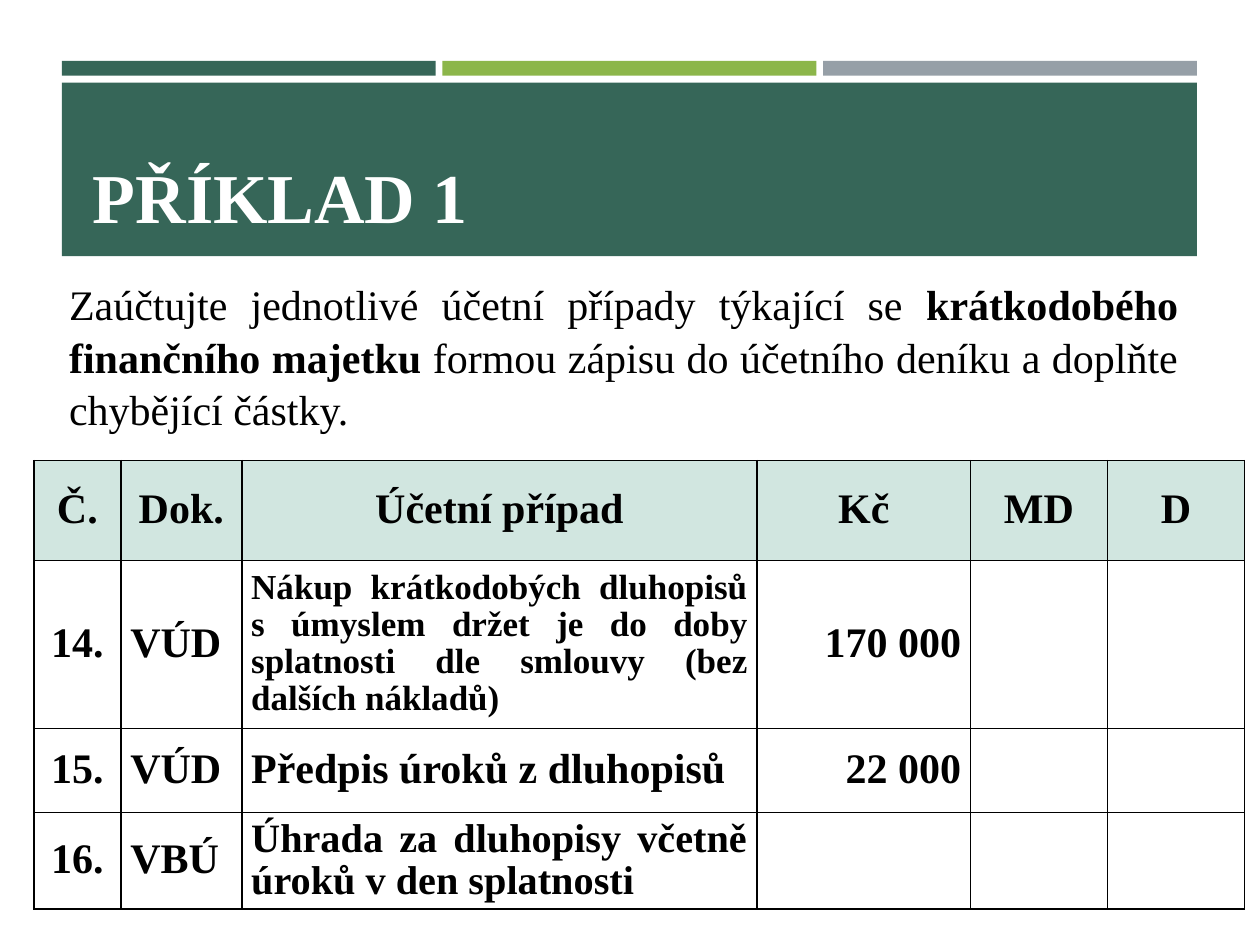
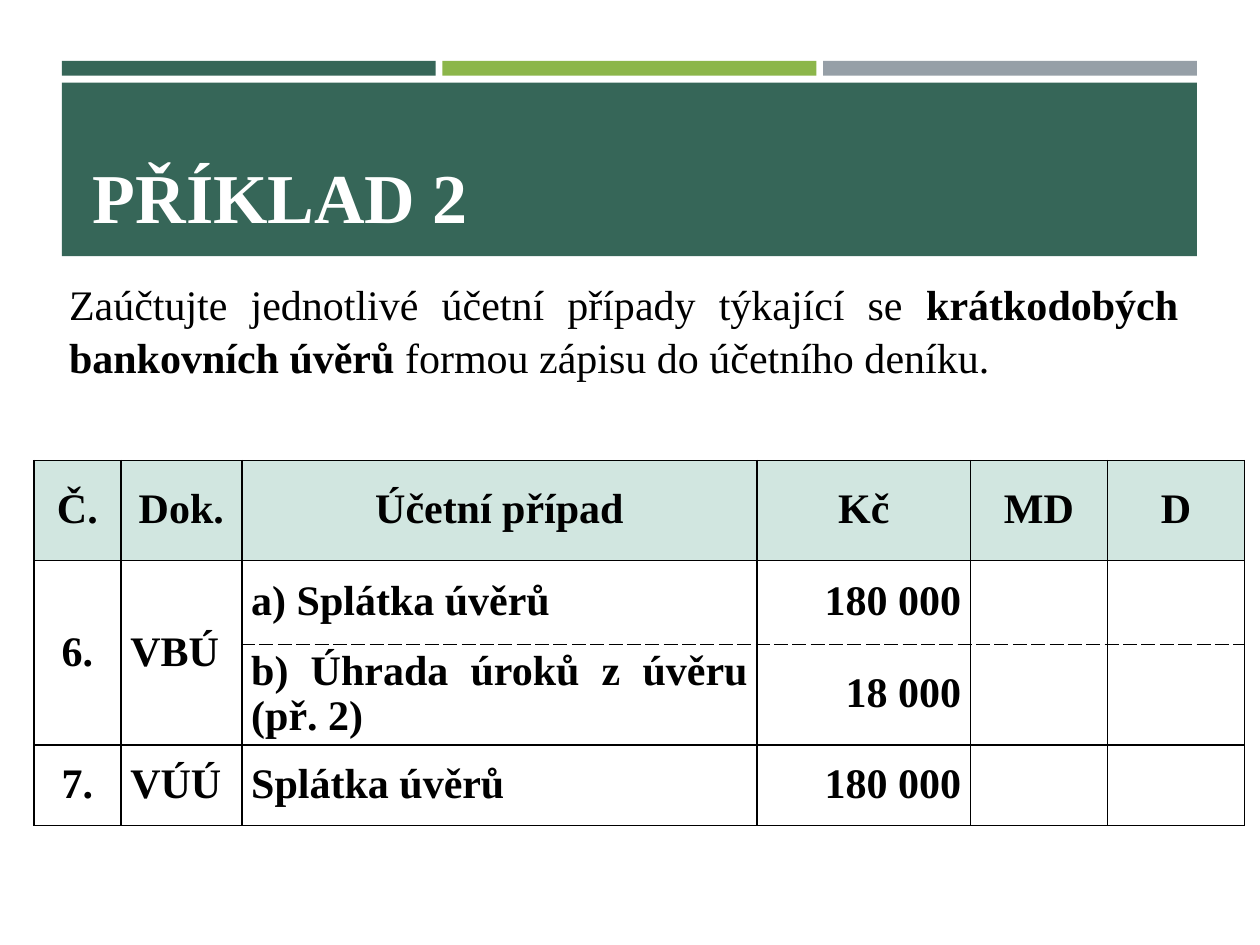
from lxml import etree
from pptx import Presentation
from pptx.dml.color import RGBColor
from pptx.enum.shapes import MSO_SHAPE
from pptx.enum.text import MSO_ANCHOR, PP_ALIGN
from pptx.oxml import parse_xml
from pptx.oxml.ns import nsdecls
from pptx.util import Pt

RECTANGLE = MSO_SHAPE.RECTANGLE
TOP, MIDDLE, BOTTOM = MSO_ANCHOR.TOP, MSO_ANCHOR.MIDDLE, MSO_ANCHOR.BOTTOM
LEFT, CENTER, RIGHT, JUSTIFY = PP_ALIGN.LEFT, PP_ALIGN.CENTER, PP_ALIGN.RIGHT, PP_ALIGN.JUSTIFY

FONT = "Times New Roman"
GREEN, LIME, GREY, MINT = "366658", "8CB64A", "969FA7", "D1E6E0"
BLACK, WHITE = "000000", "FFFFFF"
MARGIN, BAND_WIDTH = 35.3, 648.7
BAR_WIDTH, BAR_STEP = 213.7, 217.5
HEADINGS = ("Č.", "Dok.", "Účetní případ", "Kč", "MD", "D")
COLUMN_WIDTHS = (49.7, 69.1, 294.5, 121.9, 78.3, 78.3)
ALIGNMENTS = (CENTER, LEFT, JUSTIFY, RIGHT, CENTER, CENTER)
CASE_COLUMN = 2
HEADING_HEIGHT = 57


def color(hex_value):
    """Return the colour for a hex string."""
    return RGBColor.from_string(hex_value)


class JournalDeck:
    """Hold the presentation style and the slide being built."""

    def __init__(self):
        """Start an empty presentation."""
        self.deck = Presentation()
        self.deck.slide_width, self.deck.slide_height = Pt(720), Pt(540)
        self.slide = None

    def start_slide(self, title):
        """Add a slide with the colour bars and the title band."""
        self.slide = self.deck.slides.add_slide(self.deck.slide_layouts[6])
        for index, bar_color in enumerate((GREEN, LIME, GREY)):
            self.block(MARGIN + index * BAR_STEP, 34.8, BAR_WIDTH, 8.4, bar_color)
        self.block(MARGIN, 47.3, BAND_WIDTH, 99.1, GREEN)
        self.text(46, 54, 629.3, 85, [(title, True)], 40, WHITE, BOTTOM, LEFT)

    def block(self, left, top, width, height, fill):
        """Add a plain filled rectangle."""
        block = self.slide.shapes.add_shape(RECTANGLE, Pt(left), Pt(top), Pt(width), Pt(height))
        block.shadow.inherit = False
        block.fill.solid()
        block.fill.fore_color.rgb = color(fill)
        block.line.fill.background()

    def add_runs(self, paragraph, pieces, size, ink, align, spacing):
        """Fill a paragraph with (words, bold) runs."""
        paragraph.alignment = align
        paragraph.line_spacing = spacing
        for words, bold in pieces:
            run = paragraph.add_run()
            run.text = words
            run.font.name, run.font.size, run.font.bold = FONT, Pt(size), bold
            run.font.color.rgb = color(ink)

    def text(self, left, top, width, height, pieces, size, ink, anchor, align, spacing=1.0):
        """Add a wrapped text box with one paragraph."""
        box = self.slide.shapes.add_textbox(Pt(left), Pt(top), Pt(width), Pt(height))
        frame = box.text_frame
        frame.word_wrap = True
        frame.vertical_anchor = anchor
        self.add_runs(frame.paragraphs[0], pieces, size, ink, align, spacing)

    def instruction(self, subject, ending, height):
        """Add the exercise instruction with its subject in bold."""
        opening = "Zaúčtujte jednotlivé účetní případy týkající se "
        pieces = [(opening, False), (subject, True), (ending, False)]
        self.text(32.4, 154, 648, height, pieces, 24, BLACK, TOP, JUSTIFY, 1.05)

    def borders(self, cell, dashed_sides):
        """Draw the four cell borders, dashing the given sides."""
        properties = cell._tc.get_or_add_tcPr()
        for index, side in enumerate("LRTB"):
            line = parse_xml(
                f'<a:ln{side} {nsdecls("a")} w="{Pt(1)}"><a:solidFill>'
                f'<a:srgbClr val="{BLACK}"/></a:solidFill></a:ln{side}>')
            dash = etree.SubElement(line, line[0].tag.replace("solidFill", "prstDash"))
            dash.set("val", "dash" if side in dashed_sides else "solid")
            properties.insert(index, line)

    def cell(self, cell, words, size, align, fill=None, dashed_sides=""):
        """Format one table cell and add its words."""
        cell.margin_left = cell.margin_right = Pt(5.4)
        cell.margin_top = cell.margin_bottom = Pt(0)
        cell.vertical_anchor = MIDDLE
        if fill:
            cell.fill.solid()
            cell.fill.fore_color.rgb = color(fill)
        else:
            cell.fill.background()
        self.borders(cell, dashed_sides)
        if words:
            self.add_runs(cell.text_frame.paragraphs[0], [(words, True)], size, BLACK, align, 0.95)

    def journal(self, entries, split_row=None):
        """Add the journal of (height, case size, words); split_row shares its number with the next."""
        heights = [HEADING_HEIGHT] + [height for height, _, _ in entries]
        frame = self.slide.shapes.add_table(
            len(heights), len(HEADINGS), Pt(19.4), Pt(263.2), Pt(sum(COLUMN_WIDTHS)), Pt(sum(heights)))
        table = frame.table
        for column, width in zip(table.columns, COLUMN_WIDTHS):
            column.width = Pt(width)
        for row, height in zip(table.rows, heights):
            row.height = Pt(height)
        for column, heading in enumerate(HEADINGS):
            self.cell(table.cell(0, column), heading, 24, CENTER, MINT)
        for row, (_, case_size, words) in enumerate(entries, 1):
            for column, align in enumerate(ALIGNMENTS):
                is_case = column == CASE_COLUMN
                dashed = ""
                if split_row and column >= CASE_COLUMN:
                    dashed = {split_row: "B", split_row + 1: "T"}.get(row, "")
                entry = words[column] if column < len(words) else ""
                self.cell(table.cell(row, column), entry, case_size if is_case else 24, align,
                          dashed_sides=dashed)
        if split_row:
            for column in range(CASE_COLUMN):
                table.cell(split_row, column).merge(table.cell(split_row + 1, column))


def main():
    """Build both exercises and save them."""
    journal_deck = JournalDeck()

    journal_deck.start_slide("PŘÍKLAD 1")
    journal_deck.instruction("krátkodobého finančního majetku ",
                             "formou zápisu do účetního deníku a doplňte chybějící částky.", 94.5)
    bond_purchase = ("Nákup krátkodobých dluhopisů s úmyslem držet je do doby splatnosti "
                     "dle smlouvy (bez dalších nákladů)")
    journal_deck.journal([
        (96, 20, ("14.", "VÚD", bond_purchase, "170 000")),
        (48, 24, ("15.", "VÚD", "Předpis úroků z dluhopisů", "22 000")),
        (55.4, 23, ("16.", "VBÚ", "Úhrada za dluhopisy včetně úroků v den splatnosti")),
    ])

    journal_deck.start_slide("PŘÍKLAD 2")
    journal_deck.instruction("krátkodobých bankovních úvěrů ",
                             "formou zápisu do účetního deníku.", 65.4)
    journal_deck.journal([
        (48, 24, ("6.", "VBÚ", "a) Splátka úvěrů", "180 000")),
        (57.7, 24, ("", "", "b) Úhrada úroků z úvěru (př. 2)", "18 000")),
        (46, 24, ("7.", "VÚÚ", "Splátka úvěrů", "180 000")),
    ], split_row=1)

    journal_deck.deck.save("out.pptx")


if __name__ == "__main__":
    main()
